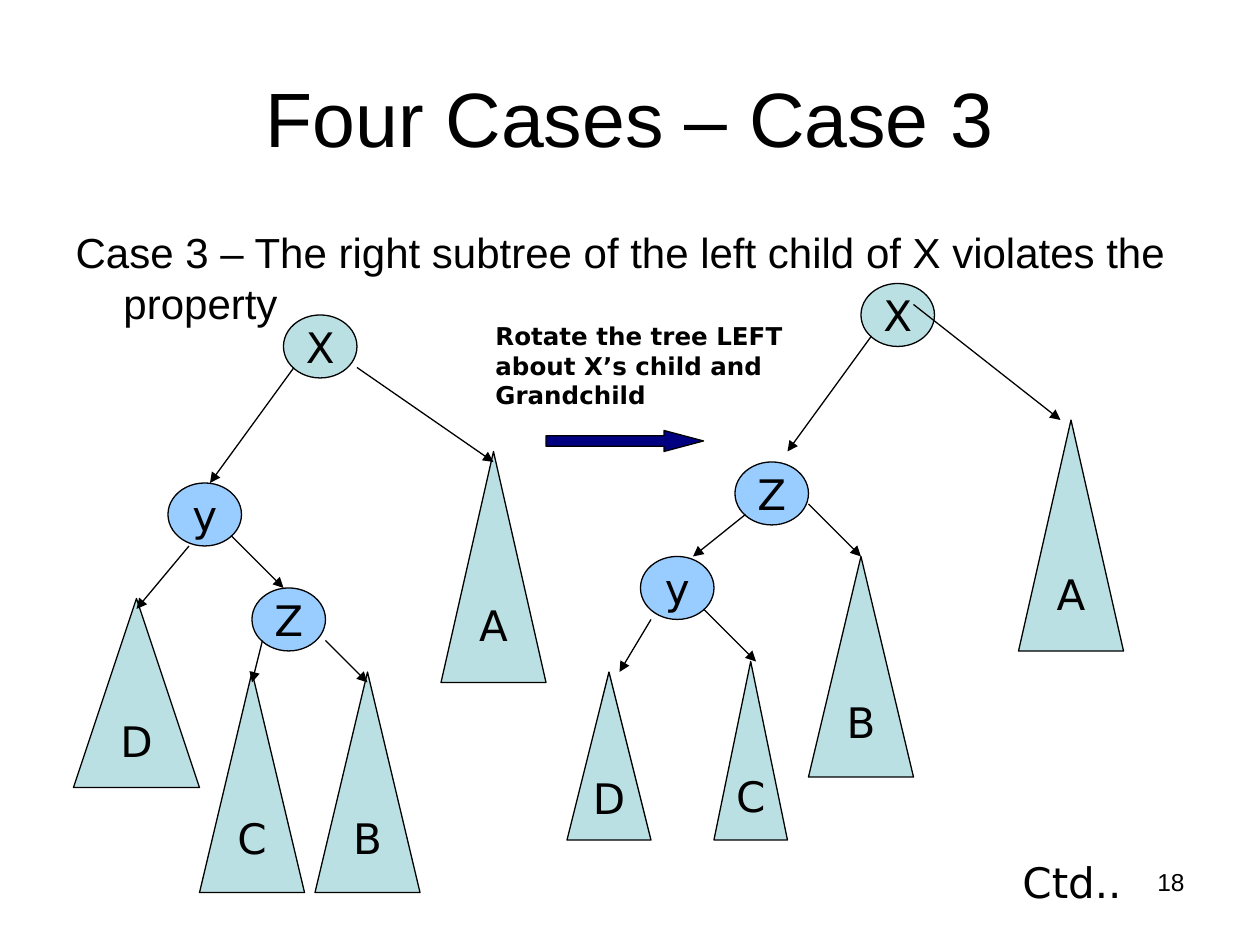
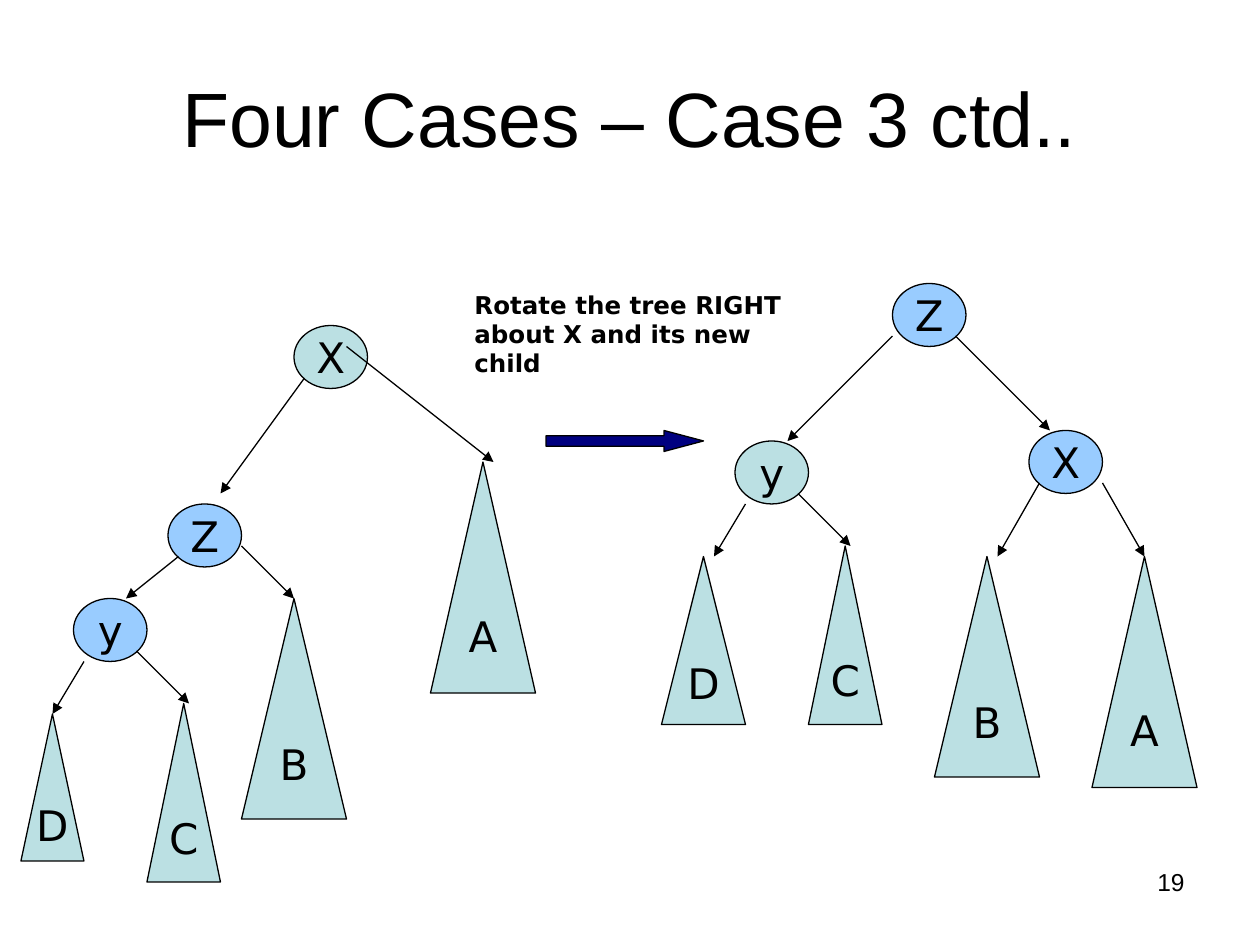
from dataclasses import dataclass

from pptx import Presentation
from pptx.dml.color import RGBColor
from pptx.enum.shapes import MSO_CONNECTOR, MSO_SHAPE
from pptx.enum.text import MSO_ANCHOR, MSO_AUTO_SIZE, PP_ALIGN
from pptx.oxml.ns import qn
from pptx.util import Inches, Pt
from lxml.etree import SubElement


@dataclass(frozen=True)
class Theme:
    ink: str = "000000"
    teal: str = "BBE0E3"
    blue: str = "99CCFF"
    navy: str = "000080"
    heading_font: str = "Arial"
    diagram_font: str = "DejaVu Sans"
    title_size: int = 44
    text_size: int = 24
    small_size: int = 14
    line_width: float = 0.75


THEME = Theme()

# The page is a grid of 120 x 90 cells, twelve to the inch
COLUMNS, ROWS = 120, 90
NODE_SIZE = (7, 6)
ROTATION_ARROW = (52, 41, 15, 2)
TITLE_AREA = (6, 3.6, 108, 15)
BODY_AREA = (6, 21, 108, 59.4)
NUMBER_AREA = (86, 82, 28, 6.25)
CONTINUED_AREA = (90, 81, 18, 6)
CALLOUT_SIZE = (33, 9.6)

# Trees: nodes (column, row, fill), subtrees (column, row, width, height),
# links (from column, from row, to column, to row)
UNBALANCED = {
    "nodes": {"X": (27, 30, THEME.teal), "y": (16, 46, THEME.blue), "Z": (24, 56, THEME.blue)},
    "subtrees": {"A": (42, 43, 10, 22), "B": (30, 64, 10, 21),
                 "C": (19, 64, 10, 21), "D": (7, 57, 12, 18)},
    "links": [(28, 35, 20, 46), (34, 35, 47, 44), (18, 52, 13, 58),
              (22, 51, 27, 56), (25, 61, 24, 65), (31, 61, 35, 65)],
}
ROTATED_LEFT = {
    "nodes": {"X": (82, 27, THEME.teal), "y": (61, 53, THEME.blue), "Z": (70, 44, THEME.blue)},
    "subtrees": {"A": (97, 40, 10, 22), "B": (77, 53, 10, 21),
                 "C": (68, 63, 7, 17), "D": (54, 64, 8, 16)},
    "links": [(83, 32, 75, 43), (87, 29, 101, 40), (71, 49, 66, 53),
              (77, 48, 82, 53), (62, 59, 59, 64), (67, 58, 72, 63)],
}
BALANCED = {
    "nodes": {"X": (98, 41, THEME.blue), "y": (70, 42, THEME.teal), "Z": (85, 27, THEME.blue)},
    "subtrees": {"A": (104, 53, 10, 22), "B": (89, 53, 10, 21),
                 "C": (77, 52, 7, 17), "D": (63, 53, 8, 16)},
    "links": [(85, 32, 75, 42), (91, 32, 100, 41), (71, 48, 68, 53),
              (76, 47, 81, 52), (99, 46, 95, 53), (105, 46, 109, 53)],
}


def shifted(tree, right, down, **resized):
    """Move a tree across the grid and replace the named subtrees."""
    moved = {name: (column + right, row + down, *size)
             for name, (column, row, *size) in tree["subtrees"].items()}
    return {
        "nodes": {name: (column + right, row + down, fill)
                  for name, (column, row, fill) in tree["nodes"].items()},
        "subtrees": moved | resized,
        "links": [(x1 + right, y1 + down, x2 + right, y2 + down)
                  for x1, y1, x2, y2 in tree["links"]],
    }


PAGES = [
    {
        "number": 18,
        "title": "Four Cases – Case 3",
        "body": "Case 3 – The right subtree of the left child of X violates the property",
        "callout": "Rotate the tree LEFT about X’s child and Grandchild",
        "callout_at": (46, 30),
        "continued": "Ctd..",
        "trees": [UNBALANCED, ROTATED_LEFT],
    },
    {
        "number": 19,
        "title": "Four Cases – Case 3 ctd..",
        "callout": "Rotate the tree RIGHT about X and its new child",
        "callout_at": (44, 27),
        "trees": [shifted(ROTATED_LEFT, -54, 4, A=(41, 44, 10, 22), D=(2, 68, 6, 14)),
                  BALANCED],
    },
]


def grid(*cells):
    return [Inches(cell / 12) for cell in cells]


def place(box, area):
    box.left, box.top, box.width, box.height = grid(*area)


def write(box, text, size, font, align=PP_ALIGN.LEFT, bold=False):
    para = box.text_frame.paragraphs[0]
    para.text = text
    para.alignment = align
    para.font.name = font
    para.font.size = Pt(size)
    para.font.bold = bold
    para.font.color.rgb = RGBColor.from_string(THEME.ink)
    return para


def outline(line):
    line.color.rgb = RGBColor.from_string(THEME.ink)
    line.width = Pt(THEME.line_width)


# Diagram parts
def add_figure(page, preset, area, fill, label=""):
    figure = page.shapes.add_shape(preset, *grid(*area))
    figure.shadow.inherit = False
    figure.fill.solid()
    figure.fill.fore_color.rgb = RGBColor.from_string(fill)
    outline(figure.line)
    if label:
        figure.text_frame.word_wrap = False
        figure.text_frame.vertical_anchor = MSO_ANCHOR.MIDDLE
        write(figure, label, THEME.text_size, THEME.diagram_font, PP_ALIGN.CENTER)
    return figure


def add_link(page, ends):
    link = page.shapes.add_connector(MSO_CONNECTOR.STRAIGHT, *grid(*ends))
    outline(link.line)
    SubElement(link.line._get_or_add_ln(), qn("a:tailEnd"), type="triangle")
    SubElement(link._element.spPr, qn("a:effectLst"))


def add_tree(page, tree):
    for label, (column, row, fill) in tree["nodes"].items():
        add_figure(page, MSO_SHAPE.OVAL, (column, row, *NODE_SIZE), fill, label)
    for label, area in tree["subtrees"].items():
        add_figure(page, MSO_SHAPE.FLOWCHART_EXTRACT, area, THEME.teal, label)
    for ends in tree["links"]:
        add_link(page, ends)


def add_text(page, area, *style, **options):
    box = page.shapes.add_textbox(*grid(*area))
    box.text_frame.word_wrap = True
    write(box, *style, **options)


# Title and body placeholders
def fill_title(page, text):
    title = page.shapes.title
    place(title, TITLE_AREA)
    title.text_frame.vertical_anchor = MSO_ANCHOR.MIDDLE
    write(title, text, THEME.title_size, THEME.heading_font, PP_ALIGN.CENTER)


def fill_body(page, text):
    body = page.placeholders[1]
    place(body, BODY_AREA)
    body.text_frame.auto_size = MSO_AUTO_SIZE.NONE
    para = write(body, text, THEME.text_size, THEME.heading_font)
    properties = para._p.get_or_add_pPr()
    hanging = Inches(0.38)
    properties.set("marL", str(hanging))
    properties.set("indent", str(-hanging))
    properties.insert_element_before(
        properties.makeelement(qn("a:buNone")), "a:tabLst", "a:defRPr", "a:extLst")


def build_page(deck, content):
    layout_name = "Title and Content" if "body" in content else "Title Only"
    page = deck.slides.add_slide(deck.slide_layouts.get_by_name(layout_name))
    fill_title(page, content["title"])
    if "body" in content:
        fill_body(page, content["body"])
    for tree in content["trees"]:
        add_tree(page, tree)

    # Rotation step between the two trees
    arrow = add_figure(page, MSO_SHAPE.RIGHT_ARROW, ROTATION_ARROW, THEME.navy)
    arrow.adjustments[1] = 1.88
    add_text(page, (*content["callout_at"], *CALLOUT_SIZE), content["callout"],
             THEME.small_size, THEME.diagram_font, bold=True)

    # Footer
    if "continued" in content:
        add_text(page, CONTINUED_AREA, content["continued"],
                 THEME.text_size, THEME.diagram_font, PP_ALIGN.RIGHT)
    add_text(page, NUMBER_AREA, str(content["number"]),
             THEME.small_size, THEME.heading_font, PP_ALIGN.RIGHT)


def main():
    deck = Presentation()
    deck.slide_width, deck.slide_height = grid(COLUMNS, ROWS)
    for content in PAGES:
        build_page(deck, content)
    deck.save("out.pptx")


if __name__ == "__main__":
    main()
